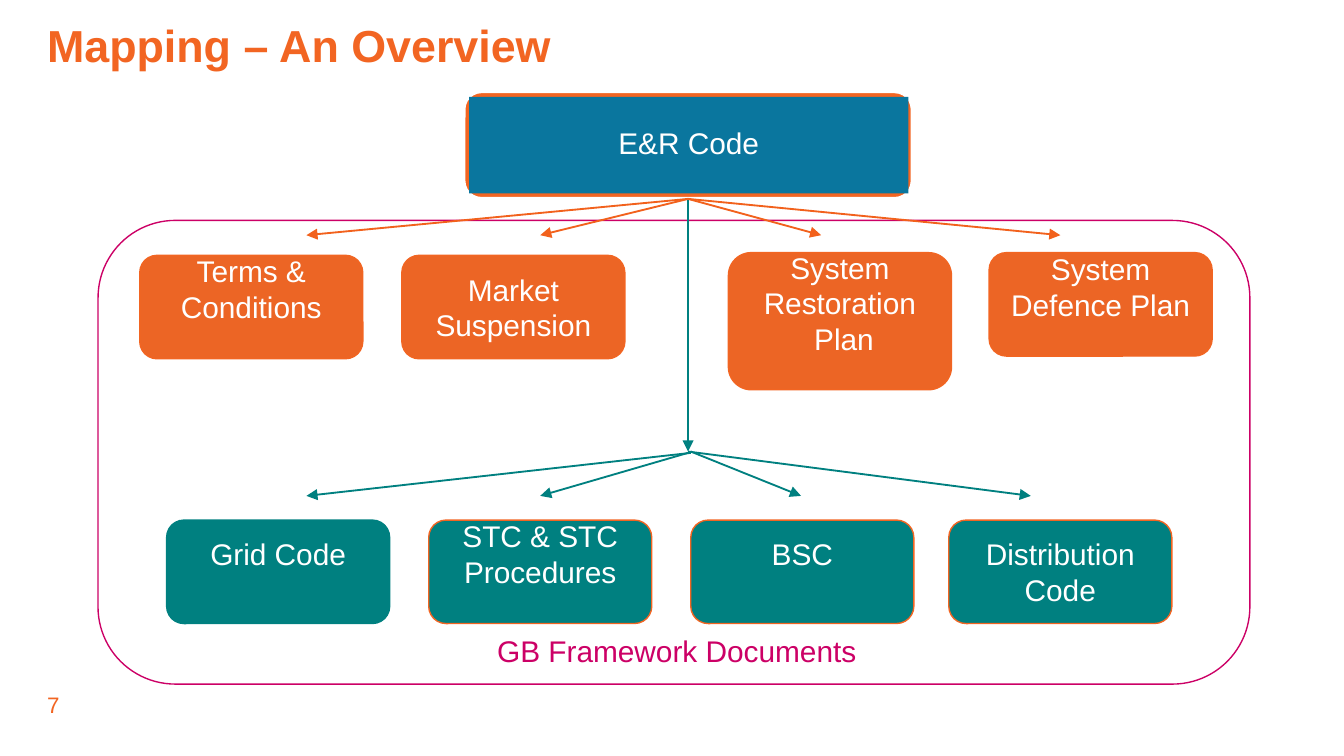
from dataclasses import dataclass
from typing import Optional

from lxml.etree import SubElement
from pptx import Presentation
from pptx.dml.color import RGBColor
from pptx.enum.shapes import MSO_CONNECTOR, MSO_SHAPE
from pptx.enum.text import MSO_ANCHOR, PP_ALIGN
from pptx.oxml.ns import qn
from pptx.util import Inches, Pt

COLORS = {
    "white": "FFFFFF",
    "orange": "F26522",
    "box_orange": "EC6525",
    "arrow_orange": "F2611C",
    "teal": "008080",
    "blue": "0A769E",
    "magenta": "CC0066",
}
FONT = "Arial"
BOX_WIDTH = 1.66
BOX_HEIGHT = 0.77
LINE_HEIGHT = 0.27
CODES_TOP = 3.87
TRUNK_X = 5.12
TRUNK_END = 3.36


@dataclass
class Document:
    lines: list[str]
    left: float
    top: float
    fill: str
    line: str
    height: float = BOX_HEIGHT
    raised: bool = True


@dataclass
class Arrow:
    start: tuple[float, float]
    end: tuple[float, float]
    color: str


PLANS = [
    Document(["System", "Defence Plan"], 7.36, 1.88, "box_orange", "orange"),
    Document(["System", "Restoration", " Plan"], 5.42, 1.88, "box_orange", "orange", height=1.02),
    Document(["Market Suspension"], 2.99, 1.9, "box_orange", "orange", raised=False),
    Document(["Terms & Conditions"], 1.04, 1.9, "box_orange", "orange"),
]
CODES = [
    Document(["Grid Code"], 1.24, CODES_TOP, "teal", "teal"),
    Document(["STC & STC Procedures"], 3.19, CODES_TOP, "teal", "orange"),
    Document(["BSC"], 5.14, CODES_TOP, "teal", "orange"),
    Document(["Distribution Code"], 7.06, CODES_TOP, "teal", "orange", raised=False),
]
CODE_ARROWS = [
    Arrow((5.14, 3.37), (2.28, 3.69), "teal"),
    Arrow((TRUNK_X, 3.37), (4.02, 3.69), "teal"),
    Arrow((5.14, TRUNK_END), (5.96, 3.69), "teal"),
    Arrow((TRUNK_X, TRUNK_END), (7.67, 3.69), "teal"),
]
HEADER_ARROWS = [Arrow((TRUNK_X, 1.48), (TRUNK_X, TRUNK_END), "teal")] + [
    Arrow((TRUNK_X, 1.48), (x, 1.75), "arrow_orange") for x in (2.28, 4.02, 6.11, 7.89)
]


def rgb(name: str) -> RGBColor:
    return RGBColor.from_string(COLORS[name])


def write(frame, lines: list[str], size: float, color: str,
          align=PP_ALIGN.LEFT, anchor=MSO_ANCHOR.TOP, bold: bool = False,
          spacing: Optional[float] = None, bottom: float = 0) -> None:
    frame.word_wrap = True
    frame.vertical_anchor = anchor
    frame.margin_left = frame.margin_right = frame.margin_top = 0
    frame.margin_bottom = Inches(bottom)
    for index, line in enumerate(lines):
        para = frame.add_paragraph() if index else frame.paragraphs[0]
        para.alignment = align
        if spacing:
            para.line_spacing = spacing
        span = para.add_run()
        span.text = line
        span.font.name = FONT
        span.font.size = Pt(size)
        span.font.bold = bold
        span.font.color.rgb = rgb(color)


def add_box(page, kind, left: float, top: float, width: float, height: float,
            fill: str, line: Optional[str] = None, weight: float = 0.75):
    box = page.shapes.add_shape(kind, Inches(left), Inches(top), Inches(width), Inches(height))
    box.shadow.inherit = False
    box.fill.solid()
    box.fill.fore_color.rgb = rgb(fill)
    if line:
        box.line.color.rgb = rgb(line)
        box.line.width = Pt(weight)
    else:
        box.line.fill.background()
    return box


def add_document(page, document: Document) -> None:
    box = add_box(page, MSO_SHAPE.ROUNDED_RECTANGLE, document.left, document.top,
                  BOX_WIDTH, document.height, document.fill, document.line)
    write(box.text_frame, document.lines, 16, "white", PP_ALIGN.CENTER, MSO_ANCHOR.MIDDLE,
          bottom=LINE_HEIGHT if document.raised else 0)


def add_arrow(page, arrow: Arrow, source=None) -> None:
    points = [Inches(value) for value in (*arrow.start, *arrow.end)]
    connector = page.shapes.add_connector(MSO_CONNECTOR.STRAIGHT, *points)
    if source is not None:
        connector.begin_connect(source, 2)
    connector.line.color.rgb = rgb(arrow.color)
    connector.line.width = Pt(1)
    SubElement(connector.line._get_or_add_ln(), qn("a:tailEnd"), type="triangle")
    SubElement(connector._element.spPr, qn("a:effectLst"))


def add_label(page, text: str, left: float, top: float, width: float, height: float,
              size: float, color: str) -> None:
    box = page.shapes.add_textbox(Inches(left), Inches(top), Inches(width), Inches(height))
    write(box.text_frame, [text], size, color)


def main() -> None:
    deck = Presentation()
    deck.slide_width = Inches(10)
    deck.slide_height = Inches(10 * 9 / 16)
    page = deck.slides.add_slide(deck.slide_layouts[5])

    title = page.shapes.title
    title.left, title.top = Inches(0.35), Inches(0.21)
    title.width, title.height = Inches(9.29), Inches(0.32)
    write(title.text_frame, ["Mapping – An Overview"], 24, "orange", bold=True, spacing=0.8)

    add_label(page, "7", 0.35, 5.14, 0.91, 0.2, 12, "orange")
    add_box(page, MSO_SHAPE.ROUNDED_RECTANGLE, 0.73, 1.64, 8.57, 3.45, "white", "magenta")

    header = add_box(page, MSO_SHAPE.ROUNDED_RECTANGLE, 3.45, 0.68, 3.34, 0.8,
                     "orange", "white", 2)
    header_face = add_box(page, MSO_SHAPE.RECTANGLE, 3.49, 0.72, 3.27, 0.72, "blue")
    write(header_face.text_frame, ["E&R Code"], 16, "white",
          PP_ALIGN.CENTER, MSO_ANCHOR.MIDDLE, spacing=0.9)

    for document in PLANS + CODES:
        add_document(page, document)
    for arrow in CODE_ARROWS:
        add_arrow(page, arrow)
    for arrow in HEADER_ARROWS:
        add_arrow(page, arrow, header)

    add_label(page, "GB Framework Documents", 3.7, 4.71, 3.13, 0.27, 16, "magenta")
    deck.save("out.pptx")


if __name__ == "__main__":
    main()
